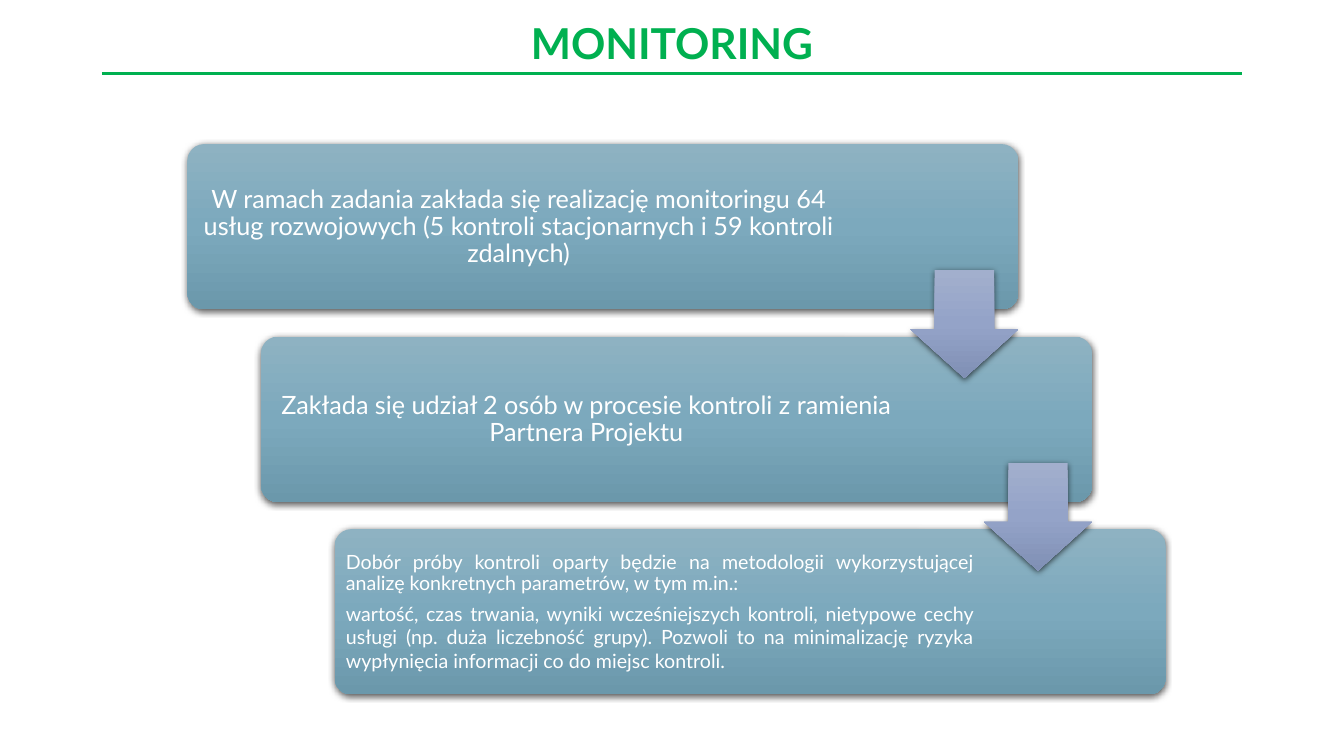
import copy
import dataclasses

import lxml.etree
import pptx
import pptx.dml.color
import pptx.enum.shapes
import pptx.enum.text
import pptx.oxml
import pptx.oxml.ns
import pptx.util

Inches = pptx.util.Inches
Pt = pptx.util.Pt
Align = pptx.enum.text.PP_ALIGN
Preset = pptx.enum.shapes.MSO_SHAPE
qn = pptx.oxml.ns.qn


@dataclasses.dataclass
class Theme:
    font: str = "Lato"
    green: str = "00B050"
    white: str = "FFFFFF"
    box_gradient: tuple = ("8EB2C2", "7CA9BD", "6B98AB")
    arrow_gradient: tuple = ("A2AFCD", "94A3C8", "8090B5")
    title_size: int = 38
    step_size: int = 18
    detail_size: int = 14


theme = Theme()
SHADOW = (
    '<a:outerShdw xmlns:a="http://schemas.openxmlformats.org/drawingml/2006/main" '
    'blurRad="57150" dist="19050" dir="5400000" algn="ctr" rotWithShape="0">'
    '<a:srgbClr val="000000"><a:alpha val="63000"/></a:srgbClr></a:outerShdw>'
)


def add_gradient_shape(preset, left, top, width, height, adjustments, colors):
    shape = slide.shapes.add_shape(
        preset, Inches(left), Inches(top), Inches(width), Inches(height)
    )
    for index, value in enumerate(adjustments):
        shape.adjustments[index] = value
    shape.line.fill.background()
    shape.fill.gradient()
    shape.fill.gradient_angle = 270
    properties = shape._element.spPr
    stop_list = properties.find(".//" + qn("a:gsLst"))
    stop_list.insert(1, copy.deepcopy(stop_list[0]))
    for index, stop in enumerate(shape.fill.gradient_stops):
        stop.color.rgb = pptx.dml.color.RGBColor.from_string(colors[index])
        stop.position = index / 2
    shape.shadow.inherit = False
    properties.find(qn("a:effectLst")).append(pptx.oxml.parse_xml(SHADOW))


def add_text(paragraph, text, size, color, alignment):
    paragraph.alignment = alignment
    run = paragraph.add_run()
    run.text = text
    run.font.name = theme.font
    run.font.size = Pt(size)
    run.font.color.rgb = pptx.dml.color.RGBColor.from_string(color)
    return run


presentation = pptx.Presentation()
presentation.slide_width = Inches(13.33)
presentation.slide_height = Inches(7.5)
slide = presentation.slides.add_slide(presentation.slide_layouts[5])

title = slide.shapes.title
title.left, title.top = Inches(1.65), Inches(0.12)
title.width, title.height = Inches(10.03), Inches(0.6)
title.text_frame.auto_size = pptx.enum.text.MSO_AUTO_SIZE.NONE
title.text_frame.vertical_anchor = pptx.enum.text.MSO_ANCHOR.MIDDLE
heading = title.text_frame.paragraphs[0]
heading.line_spacing = 0.9
heading_run = add_text(heading, "monitoring", theme.title_size, theme.green, Align.CENTER)
heading_run.font.bold = True
heading_run.font._element.set("cap", "small")

rule = slide.shapes.add_connector(
    pptx.enum.shapes.MSO_CONNECTOR.STRAIGHT,
    Inches(1.01), Inches(0.73), Inches(12.32), Inches(0.73),
)
rule.line.color.rgb = pptx.dml.color.RGBColor.from_string(theme.green)
rule.line.width = Pt(2.25)
lxml.etree.SubElement(rule._element.spPr, qn("a:effectLst"))

steps = [
    (6.47, 0.07, theme.step_size, Align.CENTER, [
        "W ramach zadania zakłada się realizację monitoringu 64 usług rozwojowych "
        "(5 kontroli stacjonarnych i 59 kontroli zdalnych)",
    ]),
    (6.35, 0.07, theme.step_size, Align.CENTER, [
        "Zakłada się udział 2 osób w procesie kontroli z ramienia Partnera Projektu",
    ]),
    (6.35, 0.06, theme.detail_size, Align.JUSTIFY, [
        "Dobór próby kontroli oparty będzie na metodologii wykorzystującej analizę "
        "konkretnych parametrów, w tym m.in.:",
        "wartość, czas trwania, wyniki wcześniejszych kontroli, nietypowe cechy usługi "
        "(np. duża liczebność grupy). Pozwoli to na minimalizację ryzyka wypłynięcia "
        "informacji co do miejsc kontroli.",
    ]),
]
shift_x, shift_y = 0.73, 1.91

for index, (text_width, inset, size, alignment, texts) in enumerate(steps):
    left, top = 1.86 + index * shift_x, 1.43 + index * shift_y
    add_gradient_shape(
        Preset.ROUNDED_RECTANGLE, left, top, 8.24, 1.64, [0.1], theme.box_gradient
    )
    text_box = slide.shapes.add_textbox(
        Inches(left + 0.05), Inches(top + 0.05), Inches(text_width), Inches(1.55)
    )
    frame = text_box.text_frame
    frame.word_wrap = True
    frame.vertical_anchor = pptx.enum.text.MSO_ANCHOR.MIDDLE
    frame.margin_left = frame.margin_right = Inches(inset)
    frame.margin_top = frame.margin_bottom = Inches(inset)
    paragraph = frame.paragraphs[0]
    paragraph.line_spacing = 0.9
    paragraph.space_after = Pt(size * 0.35)
    add_text(paragraph, texts[0], size, theme.white, alignment)
    for text in texts[1:]:
        add_text(frame.add_paragraph(), text, size, theme.white, alignment)

for index in range(len(steps) - 1):
    add_gradient_shape(
        Preset.DOWN_ARROW, 9.03 + index * shift_x, 2.68 + index * shift_y,
        1.07, 1.07, [0.55, 0.45], theme.arrow_gradient,
    )

presentation.save("out.pptx")
